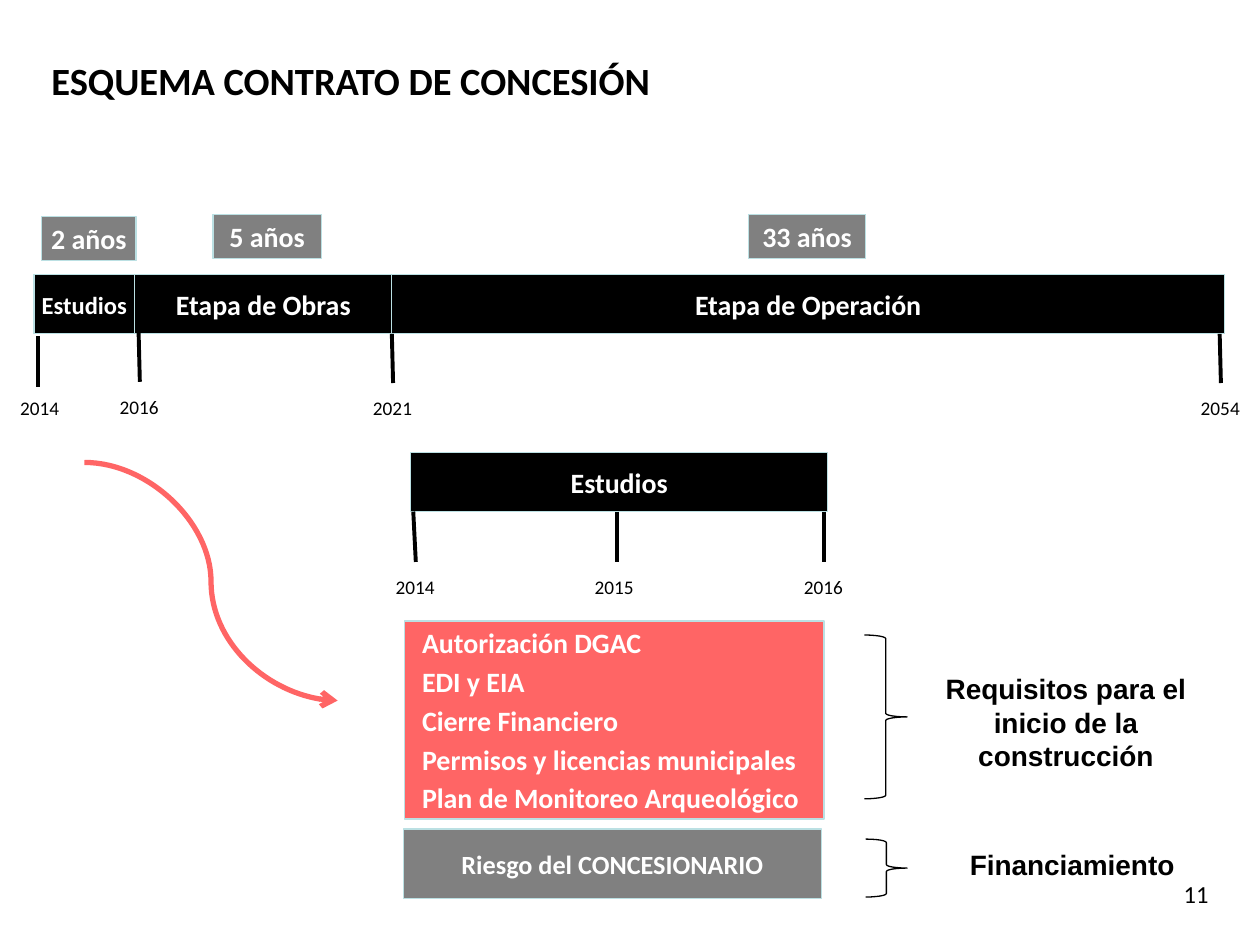
from lxml import etree
from pptx import Presentation
from pptx.dml.color import RGBColor
from pptx.enum.shapes import MSO_CONNECTOR, MSO_SHAPE
from pptx.enum.text import MSO_ANCHOR, PP_ALIGN
from pptx.oxml.ns import qn
from pptx.util import Inches, Pt

RECTANGLE, BRACE = MSO_SHAPE.RECTANGLE, MSO_SHAPE.RIGHT_BRACE
STRAIGHT, CURVE = MSO_CONNECTOR.STRAIGHT, MSO_CONNECTOR.CURVE
TOP, MIDDLE = MSO_ANCHOR.TOP, MSO_ANCHOR.MIDDLE
LEFT, CENTER, RIGHT = PP_ALIGN.LEFT, PP_ALIGN.CENTER, PP_ALIGN.RIGHT

COLORS = {"black": "000000", "white": "FFFFFF", "gray": "808080",
          "coral": "FF6565", "border": "BBE0E3"}
NARROW = (0.04, 0.05)
NORMAL = (0.1, 0.05)


def color(name):
    return RGBColor.from_string(COLORS[name])


class SchemeSlide:
    def __init__(self, page, font="Calibri"):
        self.shapes = page.shapes
        self.font = font

    def add_lines(self, shape, lines, size, ink, bold=False, align=CENTER,
                  anchor=MIDDLE, margins=NARROW, indent=0, font=None):
        frame = shape.text_frame
        frame.word_wrap = True
        frame.vertical_anchor = anchor
        frame.margin_left = frame.margin_right = Inches(margins[0])
        frame.margin_top = frame.margin_bottom = Inches(margins[1])
        for index, line in enumerate(lines):
            para = frame.add_paragraph() if index else frame.paragraphs[0]
            para.alignment = align
            if index:
                para.space_before = Pt(3)
            if indent:
                properties = para._p.get_or_add_pPr()
                properties.set("marL", str(Inches(indent)))
                properties.set("indent", "0")
            span = para.add_run()
            span.text = line
            span.font.name = font or self.font
            span.font.size = Pt(size)
            span.font.bold = bold
            span.font.color.rgb = color(ink)

    def text(self, place, line, size, **style):
        box = self.shapes.add_textbox(*map(Inches, place))
        self.add_lines(box, [line], size, "black", **style)

    def block(self, place, lines, fill, size=16, **style):
        box = self.shapes.add_shape(RECTANGLE, *map(Inches, place))
        box.shadow.inherit = False
        box.fill.solid()
        box.fill.fore_color.rgb = color(fill)
        box.line.color.rgb = color("border")
        box.line.width = Pt(0.75)
        self.add_lines(box, lines, size, "white", bold=True, **style)

    def brace(self, *place):
        brace = self.shapes.add_shape(BRACE, *map(Inches, place))
        brace.shadow.inherit = False
        brace.fill.background()
        brace.line.color.rgb = color("black")
        brace.line.width = Pt(0.75)

    def line(self, start, end, ink="black", width=2.25, kind=STRAIGHT, arrow=False):
        line = self.shapes.add_connector(kind, *map(Inches, (*start, *end)))
        line.line.color.rgb = color(ink)
        line.line.width = Pt(width)
        if arrow:
            etree.SubElement(line.line._get_or_add_ln(), qn("a:tailEnd"), type="arrow")
        etree.SubElement(line._element.spPr, qn("a:effectLst"))

    def year(self, label, left, top, tick_start, tick_end):
        """Mark a year on a timeline with a tick and its label."""
        self.line(tick_start, tick_end)
        self.text((left, top, 0.55, 0.24), label, 11)


def main():
    deck = Presentation()
    deck.slide_width, deck.slide_height = Inches(10), Inches(7.5)
    slide = SchemeSlide(deck.slides.add_slide(deck.slide_layouts[6]))

    slide.text((0.31, 0.36, 5.94, 0.55), "ESQUEMA CONTRATO DE CONCESIÓN", 22,
               bold=True, align=LEFT, margins=NORMAL)
    slide.text((7.36, 6.93, 2.33, 0.52), "11", 14,
               align=RIGHT, anchor=TOP, margins=NORMAL)

    for label, left, top, width in (("2 años", 0.33, 1.72, 0.75),
                                    ("5 años", 1.69, 1.7, 0.86),
                                    ("33 años", 5.94, 1.7, 0.93)):
        slide.block((left, top, width, 0.35), [label], "gray")

    for label, left, top, width, size in (("Etapa de Obras", 1.07, 2.18, 2.04, 16),
                                          ("Etapa de Operación", 3.11, 2.18, 6.61, 16),
                                          ("Estudios", 0.27, 2.18, 0.8, 14),
                                          ("Estudios", 3.26, 3.59, 3.31, 16)):
        slide.block((left, top, width, 0.47), [label], "black", size)

    for mark in (("2014", 0.04, 3.12, (0.3, 2.67), (0.3, 3.07)),
                 ("2016", 0.83, 3.11, (1.1, 2.64), (1.11, 3.03)),
                 ("2021", 2.84, 3.12, (3.11, 2.65), (3.12, 3.04)),
                 ("2054", 9.41, 3.12, (9.68, 2.65), (9.69, 3.04)),
                 ("2014", 3.02, 4.54, (3.28, 4.06), (3.3, 4.46)),
                 ("2015", 4.6, 4.54, (4.9, 4.06), (4.9, 4.46)),
                 ("2016", 6.26, 4.54, (6.54, 4.06), (6.54, 4.46))):
        slide.year(*mark)

    slide.line((0.67, 3.67), (2.68, 5.56), "coral", 3, CURVE, arrow=True)

    requirements = ["Autorización DGAC", "EDI y EIA", "Cierre Financiero",
                    "Permisos y licencias municipales",
                    "Plan de Monitoreo Arqueológico"]
    slide.block((3.21, 4.93, 3.33, 1.57), requirements, "coral",
                align=LEFT, indent=0.1)
    slide.block((3.2, 6.58, 3.32, 0.55), ["Riesgo del CONCESIONARIO"], "gray", 15)

    slide.brace(6.86, 5.04, 0.34, 1.3)
    slide.brace(6.87, 6.66, 0.33, 0.46)
    for place, label in (((7.36, 5.28, 2.2, 0.91),
                          "Requisitos para el inicio de la construcción"),
                         ((7.41, 6.68, 2.2, 0.37), "Financiamiento")):
        slide.text(place, label, 16, bold=True, anchor=TOP,
                   margins=NORMAL, font="Arial")

    deck.save("out.pptx")


if __name__ == "__main__":
    main()
